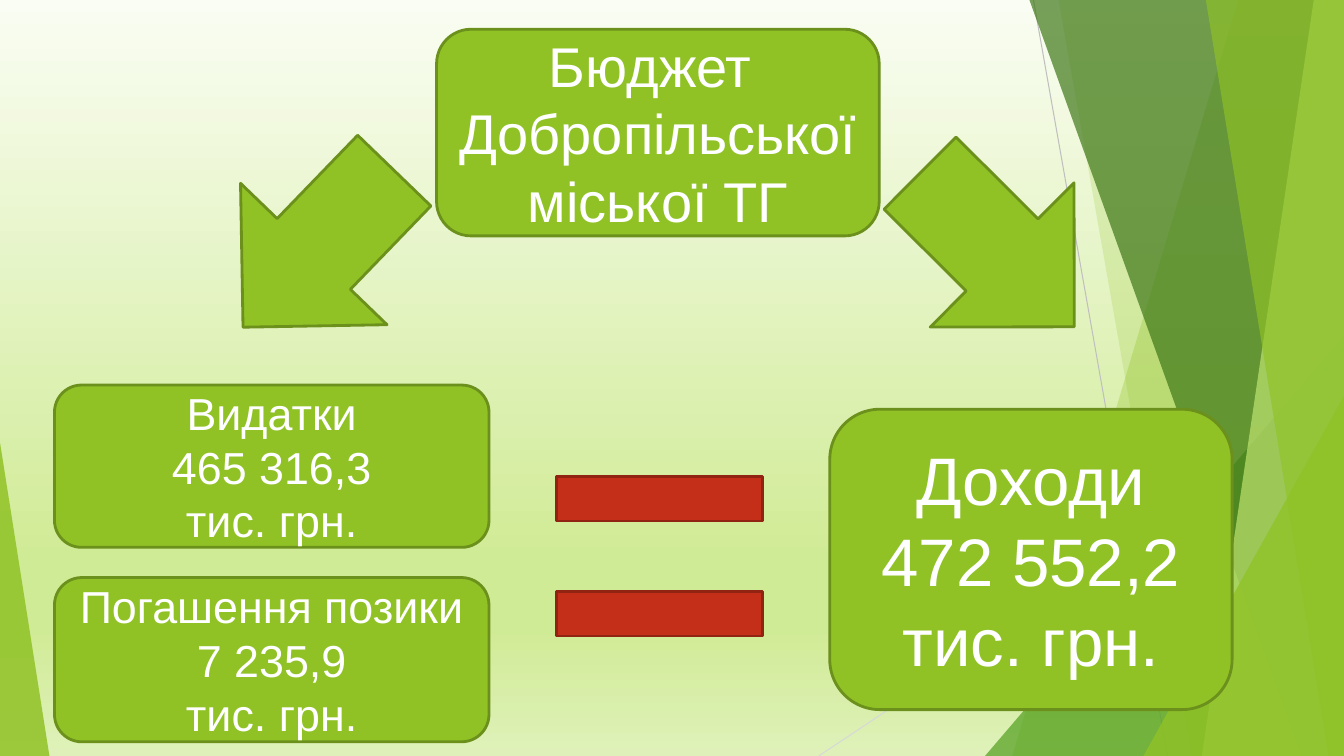
from copy import deepcopy
from dataclasses import dataclass

from lxml import etree
from pptx import Presentation
from pptx.dml.color import RGBColor
from pptx.enum.shapes import MSO_CONNECTOR, MSO_SHAPE
from pptx.enum.text import MSO_ANCHOR, PP_ALIGN
from pptx.oxml.ns import qn
from pptx.util import Inches, Pt

STRAIGHT = MSO_CONNECTOR.STRAIGHT
ROUNDED = MSO_SHAPE.ROUNDED_RECTANGLE
RECTANGLE = MSO_SHAPE.RECTANGLE
TRIANGLE = MSO_SHAPE.ISOSCELES_TRIANGLE
DOWN_ARROW = MSO_SHAPE.DOWN_ARROW
MIDDLE = MSO_ANCHOR.MIDDLE
CENTER = PP_ALIGN.CENTER

WIDTH, HEIGHT = 13.33, 7.5


@dataclass(frozen=True)
class Theme:
    font: str = "Arial"
    heading_size: int = 40
    income_size: int = 48
    expense_size: int = 32
    outline: float = 2
    hairline: float = 0.75
    text: str = "FFFFFF"
    green: str = "90C226"
    green_edge: str = "6B901C"
    red: str = "C42F1A"
    red_edge: str = "912313"
    mid_green: str = "54A021"
    dark_green: str = "3F7818"
    light_green: str = "BFE471"
    background: tuple = ((0, "FAFDF3"), (0.74, "D0EB96"), (0.83, "D0EB96"), (1, "DFF1B9"))


THEME = Theme()


@dataclass(frozen=True)
class Hairline:
    start: tuple
    end: tuple
    color: str


@dataclass(frozen=True)
class Band:
    top_left: float
    bottom_left: float
    color: str
    opacity: int


@dataclass(frozen=True)
class Corner:
    left: float
    top: float
    width: float
    apex: float
    color: str
    opacity: int


@dataclass(frozen=True)
class Block:
    kind: int
    left: float
    top: float
    width: float
    height: float
    fill: str = THEME.green
    edge: str = THEME.green_edge
    rotation: float = 0
    lines: tuple = ()
    size: int = THEME.expense_size


HAIRLINES = (
    Hairline((10.25, 0), (11.58, HEIGHT), "BFBFBF"),
    Hairline((WIDTH, 4.03), (8.12, HEIGHT), "D8D8D8"),
)

DECOR = (
    Band(12.28, 10.04, THEME.green, 30),
    Band(10.5, 11.82, THEME.green, 20),
    Corner(9.77, 3.33, 3.56, 1, THEME.mid_green, 72),
    Band(10.21, 12.91, THEME.dark_green, 70),
    Band(13.03, 11.92, THEME.light_green, 70),
    Band(11.96, 13.18, THEME.green, 65),
    Corner(11.34, 3.93, 1.99, 1, THEME.green, 80),
    Corner(0, 4.39, 0.49, 0, THEME.green, 85),
)

BUDGET = Block(ROUNDED, 4.33, 0.29, 4.39, 2.05, size=THEME.heading_size,
               lines=("Бюджет ", "Добропільської міської ТГ"))
INCOME = Block(ROUNDED, 8.23, 4.06, 3.99, 2.98, size=THEME.income_size,
               lines=("Доходи", "472 552,2", "тис. грн."))
EXPENSES = Block(ROUNDED, 0.54, 3.82, 4.31, 1.61,
                 lines=("Видатки", "465 316,3", "тис. грн."))
LOAN = Block(ROUNDED, 0.54, 5.73, 4.31, 1.63,
             lines=("Погашення позики", "7 235,9", "тис. грн."))
ARROWS = (
    Block(DOWN_ARROW, 2.15, 1.39, 2.02, 2.16, rotation=44),
    Block(DOWN_ARROW, 8.88, 1.4, 2.02, 2.16, rotation=314.9),
)
EQUALS_BARS = tuple(
    Block(RECTANGLE, 5.52, top, 2.04, 0.44, THEME.red, THEME.red_edge)
    for top in (4.73, 5.87)
)


def paint_background(slide) -> None:
    fill = slide.background.fill
    fill.gradient()
    fill.gradient_angle = 270
    stop_list = next(slide.element.iter(qn("a:gsLst")))
    while len(stop_list) < len(THEME.background):
        stop_list.append(deepcopy(stop_list[0]))
    for stop, (position, color) in zip(fill.gradient_stops, THEME.background):
        stop.position = position
        stop.color.rgb = RGBColor.from_string(color)


def draw_hairline(slide, hairline: Hairline) -> None:
    ends = (Inches(value) for value in hairline.start + hairline.end)
    connector = slide.shapes.add_connector(STRAIGHT, *ends)
    connector.line.color.rgb = RGBColor.from_string(hairline.color)
    connector.line.width = Pt(THEME.hairline)
    etree.SubElement(connector.element.spPr, qn("a:effectLst"))


def fill_translucent(shape, color: str, opacity: int) -> None:
    shape.shadow.inherit = False
    shape.line.fill.background()
    shape.fill.solid()
    shape.fill.fore_color.rgb = RGBColor.from_string(color)
    color_node = next(shape.element.spPr.iter(qn("a:srgbClr")))
    etree.SubElement(color_node, qn("a:alpha"), val=str(opacity * 1000))


def draw_band(slide, band: Band) -> None:
    outline = slide.shapes.build_freeform(Inches(band.top_left), 0)
    corners = ((WIDTH, 0), (WIDTH, HEIGHT), (band.bottom_left, HEIGHT))
    outline.add_line_segments([(Inches(x), Inches(y)) for x, y in corners])
    fill_translucent(outline.convert_to_shape(), band.color, band.opacity)


def draw_corner(slide, corner: Corner) -> None:
    triangle = slide.shapes.add_shape(
        TRIANGLE, Inches(corner.left), Inches(corner.top),
        Inches(corner.width), Inches(HEIGHT - corner.top))
    triangle.adjustments[0] = corner.apex
    fill_translucent(triangle, corner.color, corner.opacity)


def draw_block(slide, block: Block) -> None:
    shape = slide.shapes.add_shape(
        block.kind, Inches(block.left), Inches(block.top),
        Inches(block.width), Inches(block.height))
    shape.shadow.inherit = False
    shape.rotation = block.rotation
    shape.fill.solid()
    shape.fill.fore_color.rgb = RGBColor.from_string(block.fill)
    shape.line.color.rgb = RGBColor.from_string(block.edge)
    shape.line.width = Pt(THEME.outline)
    if block.lines:
        write_lines(shape.text_frame, block)


def write_lines(frame, block: Block) -> None:
    frame.text = "\n".join(block.lines)
    frame.word_wrap = True
    frame.vertical_anchor = MIDDLE
    for paragraph in frame.paragraphs:
        paragraph.alignment = CENTER
        for run in paragraph.runs:
            run.font.name = THEME.font
            run.font.size = Pt(block.size)
            run.font.color.rgb = RGBColor.from_string(THEME.text)


def main() -> None:
    deck = Presentation()
    deck.slide_width, deck.slide_height = Inches(WIDTH), Inches(HEIGHT)
    slide = deck.slides.add_slide(deck.slide_layouts[6])
    paint_background(slide)
    for hairline in HAIRLINES:
        draw_hairline(slide, hairline)
    for decor in DECOR:
        if isinstance(decor, Band):
            draw_band(slide, decor)
        else:
            draw_corner(slide, decor)
    for block in (BUDGET, INCOME, EXPENSES, *ARROWS, *EQUALS_BARS, LOAN):
        draw_block(slide, block)
    deck.save("out.pptx")


if __name__ == "__main__":
    main()
